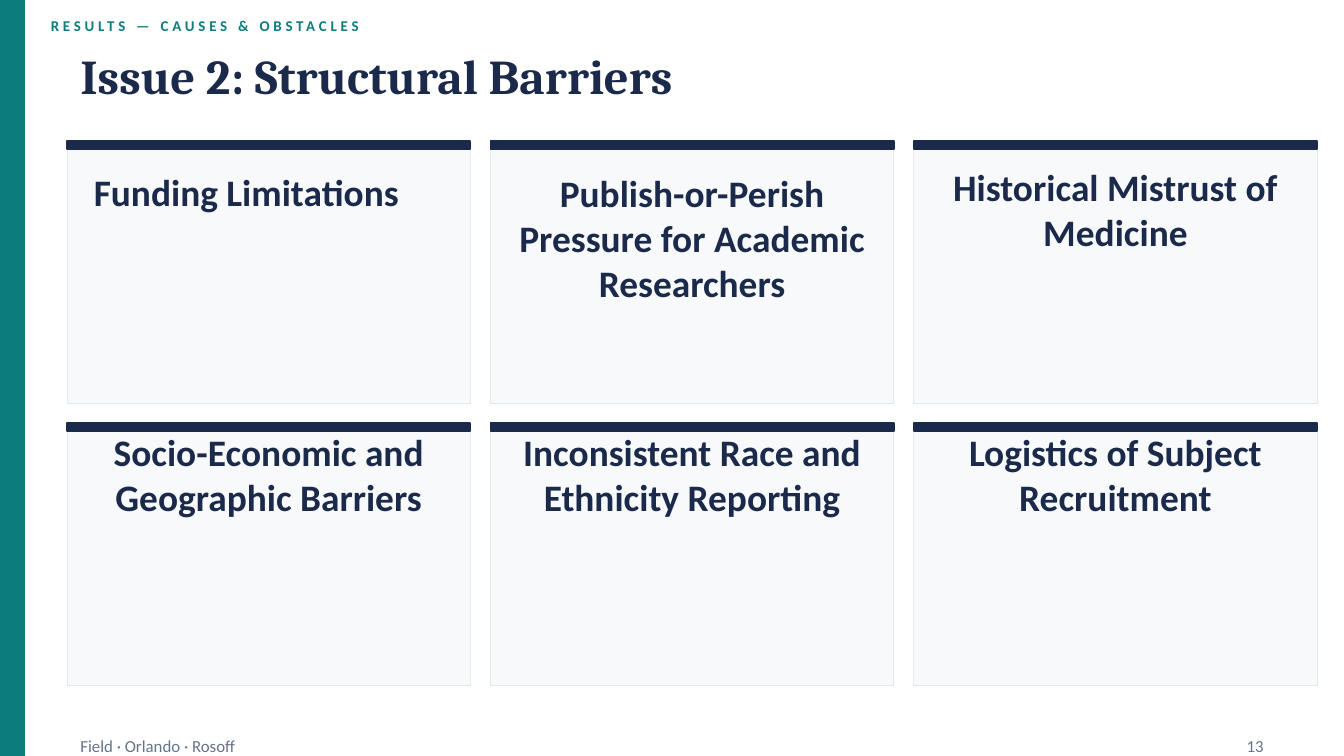
from dataclasses import dataclass

from pptx import Presentation
from pptx.dml.color import RGBColor as RGB
from pptx.enum.shapes import MSO_SHAPE as SHAPE
from pptx.enum.text import MSO_ANCHOR as ANCHOR, PP_ALIGN as ALIGN
from pptx.util import Inches, Pt


@dataclass(frozen=True)
class Theme:
    teal: RGB = RGB.from_string("0D7C7C")
    navy: RGB = RGB.from_string("1B2A4A")
    card: RGB = RGB.from_string("F7F9FB")
    border: RGB = RGB.from_string("E2E8F0")
    muted: RGB = RGB.from_string("64748B")
    body_font: str = "Calibri"
    title_font: str = "Cambria"
    kicker_size: int = 8
    title_size: int = 26
    card_size: int = 20
    footer_size: int = 9


THEME = Theme()
SLIDE_W = 10
SLIDE_H = SLIDE_W * 9 / 16
MARGIN = 0.5
CARD_TOP, CARD_W, CARD_H, GAP = 1.05, 3, 1.95, 0.15
COLUMNS = 3

# Heading, offset from card top, height, alignment
CARDS = [
    ("Funding Limitations", 0.1, 0.55, ALIGN.LEFT),
    ("Publish-or-Perish Pressure for Academic Researchers", 0.24, 0.96, ALIGN.CENTER),
    ("Historical Mistrust of Medicine", 0.23, 0.55, ALIGN.CENTER),
    ("Socio-Economic and Geographic Barriers", 0.1, 0.55, ALIGN.CENTER),
    ("Inconsistent Race and Ethnicity Reporting", 0.1, 0.55, ALIGN.CENTER),
    ("Logistics of Subject Recruitment", 0.1, 0.55, ALIGN.CENTER),
]


def add_rect(slide, x, y, w, h, fill, line=None, weight=1):
    sp = slide.shapes.add_shape(SHAPE.RECTANGLE, Inches(x), Inches(y), Inches(w), Inches(h))
    sp.shadow.inherit = False
    sp.fill.solid()
    sp.fill.fore_color.rgb = fill
    sp.line.color.rgb = line or fill
    sp.line.width = Pt(weight)


def add_text(slide, text, x, y, w, h, size, color, font=THEME.body_font,
             bold=False, align=ALIGN.LEFT, spacing=None):
    tf = slide.shapes.add_textbox(Inches(x), Inches(y), Inches(w), Inches(h)).text_frame
    tf.word_wrap = True
    tf.vertical_anchor = ANCHOR.MIDDLE
    p = tf.paragraphs[0]
    p.alignment = align
    r = p.add_run()
    r.text = text
    r.font.name = font
    r.font.size = Pt(size)
    r.font.bold = bold
    r.font.color.rgb = color
    if spacing:
        r.font._element.set("spc", str(spacing * 100))


def add_card(slide, index, heading, offset, height, align):
    row, col = divmod(index, COLUMNS)
    x = MARGIN + col * (CARD_W + GAP)
    y = CARD_TOP + row * (CARD_H + GAP)
    add_rect(slide, x, y, CARD_W, CARD_H, THEME.card, THEME.border, 0.5)
    add_rect(slide, x, y, CARD_W, 0.06, THEME.navy)
    add_text(slide, heading, x + 0.1, y + offset, CARD_W - 0.2, height,
             THEME.card_size, THEME.navy, bold=True, align=align)


def main():
    prs = Presentation()
    prs.slide_width, prs.slide_height = Inches(SLIDE_W), Inches(SLIDE_H)
    slide = prs.slides.add_slide(prs.slide_layouts[6])

    # Side band and headings
    add_rect(slide, 0, 0, 0.18, SLIDE_H, THEME.teal)
    add_text(slide, "RESULTS — CAUSES & OBSTACLES", 0.28, 0.08, 4.5, 0.22,
             THEME.kicker_size, THEME.teal, bold=True, spacing=2)
    add_text(slide, "Issue 2: Structural Barriers", MARGIN, 0.28, 9, 0.55,
             THEME.title_size, THEME.navy, THEME.title_font, bold=True)

    # Grid of barrier cards
    for index, card in enumerate(CARDS):
        add_card(slide, index, *card)

    # Footer
    add_text(slide, "Field · Orlando · Rosoff", MARGIN, 5.47, 9, 0.16,
             THEME.footer_size, THEME.muted)
    add_text(slide, "13", 9, 5.47, 0.5, 0.16,
             THEME.footer_size, THEME.muted, align=ALIGN.RIGHT)

    prs.save("out.pptx")


if __name__ == "__main__":
    main()
